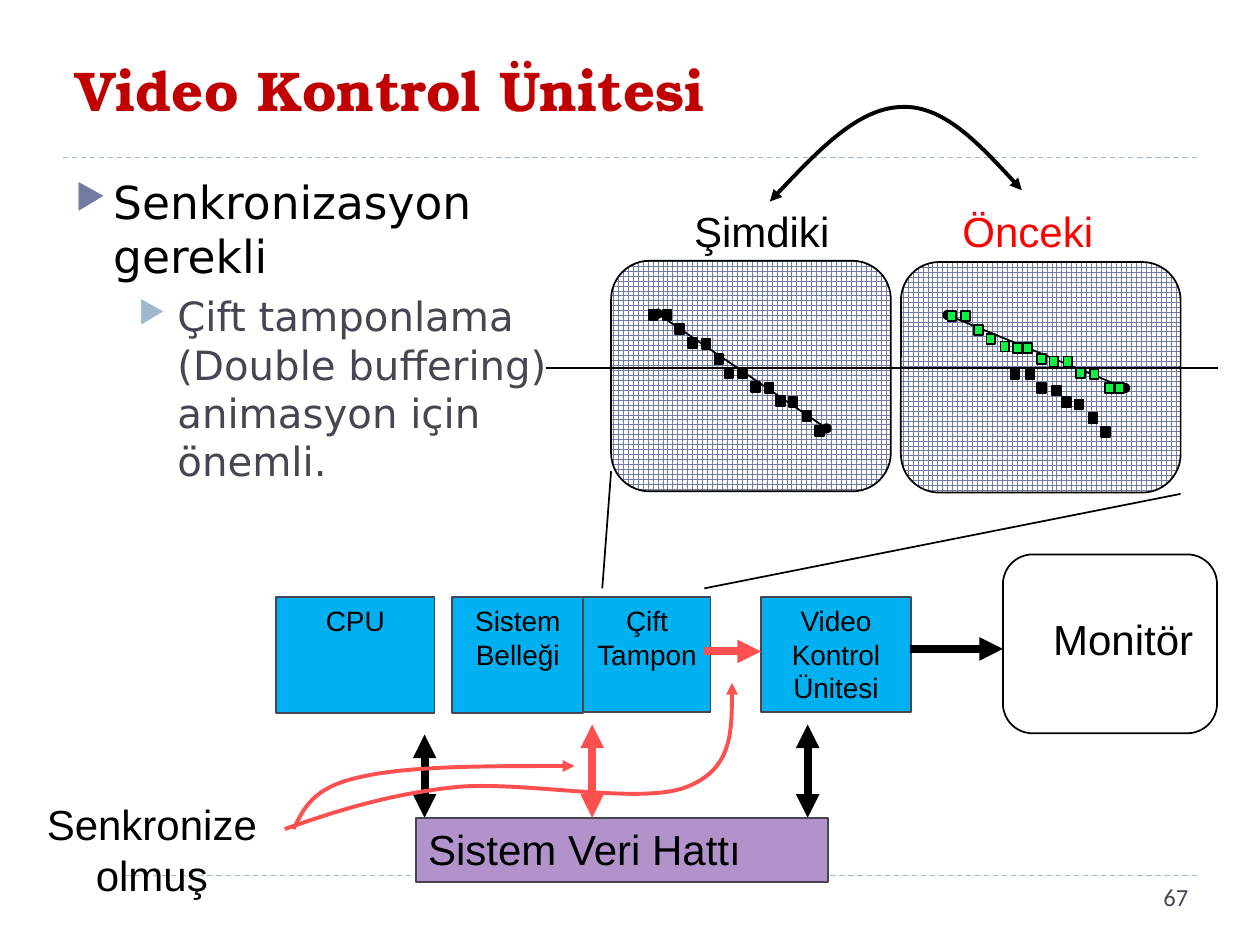
from dataclasses import dataclass

from lxml import etree
from pptx import Presentation
from pptx import util as u
from pptx.dml.color import RGBColor
from pptx.enum import dml, shapes, text
from pptx.oxml.ns import qn


@dataclass(frozen=True)
class Theme:
    black: str = "000000"
    white: str = "FFFFFF"
    red: str = "FF0000"
    coral: str = "FF5050"
    title: str = "C00000"
    slate: str = "464653"
    indigo: str = "727CA3"
    mist: str = "9FB8CD"
    sky: str = "00B0F0"
    lilac: str = "B292CA"
    green: str = "0EF044"
    sans: str = "Arial"
    thin: float = 1
    curve: float = 2.25
    thick: float = 4.5
    label: int = 24
    block: int = 16


THEME = Theme()
RECTANGLE = shapes.MSO_SHAPE.RECTANGLE
ROUNDED = shapes.MSO_SHAPE.ROUNDED_RECTANGLE
MARKER_SIZE = (0.07, 0.08)
SCREEN_SIZE = (2.22, 1.83)

CURRENT_LINE = [
    (5.26, 2.46), (5.15, 2.46), (5.36, 2.57), (5.46, 2.68), (5.57, 2.69),
    (5.67, 2.81), (5.75, 2.92), (5.86, 2.92), (5.96, 3.03), (6.07, 3.04),
    (6.16, 3.14), (6.26, 3.15), (6.37, 3.26), (6.47, 3.38)]
PREVIOUS_LINE = [
    (7.63, 2.47), (7.52, 2.47), (7.73, 2.58), (7.83, 2.65), (7.94, 2.71),
    (8.04, 2.72), (8.12, 2.72), (8.23, 2.81), (8.33, 2.83), (8.44, 2.83),
    (8.54, 2.92), (8.65, 2.93), (8.77, 3.04), (8.85, 3.04)]
LEFTOVER_LINE = [
    (8.02, 2.93), (8.14, 2.93), (8.23, 3.04), (8.35, 3.06),
    (8.43, 3.15), (8.53, 3.17), (8.64, 3.28), (8.74, 3.39)]


def rgb(color):
    return RGBColor.from_string(color)


def inches(values):
    return [u.Inches(value) for value in values]


def add_child(parent, tag, **attributes):
    return etree.SubElement(parent, qn(tag), attributes)


def set_values(target, values):
    for name, value in values.items():
        setattr(target, name, value)


def write(paragraph, content, size, color=THEME.black, font=THEME.sans,
          bold=False, align=text.PP_ALIGN.LEFT, space=0):
    paragraph.text = content
    set_values(paragraph, {"alignment": align, "space_before": u.Pt(space)})
    for run in paragraph.runs:
        set_values(run.font, {"size": u.Pt(size), "name": font, "bold": bold})
        run.font.color.rgb = rgb(color)


def add_text(slide, box, content, size, wrap=False,
             anchor=text.MSO_ANCHOR.TOP, **style):
    frame = slide.shapes.add_textbox(*inches(box)).text_frame
    set_values(frame, {"word_wrap": wrap, "vertical_anchor": anchor})
    write(frame.paragraphs[0], content, size, **style)
    return frame


def add_bullet(paragraph, left, hanging, color):
    properties = paragraph._p.get_or_add_pPr()
    properties.set("marL", str(u.Inches(left)))
    properties.set("indent", str(-u.Inches(hanging)))
    add_child(add_child(properties, "a:buClr"), "a:srgbClr", val=color)
    add_child(properties, "a:buSzPct", val="76000")
    add_child(properties, "a:buChar", char="▶")


def add_box(slide, box, fill, outline=THEME.black, kind=RECTANGLE):
    shape = slide.shapes.add_shape(kind, *inches(box))
    shape.shadow.inherit = False
    shape.fill.solid()
    shape.fill.fore_color.rgb = rgb(fill)
    if outline:
        shape.line.color.rgb = rgb(outline)
        shape.line.width = u.Pt(THEME.thin)
    else:
        shape.line.fill.background()
    return shape


def add_block(slide, box, lines, fill=THEME.sky, size=THEME.block,
              align=text.PP_ALIGN.CENTER):
    frame = add_box(slide, box, fill, THEME.slate).text_frame
    set_values(frame, {"word_wrap": True, "vertical_anchor": text.MSO_ANCHOR.TOP})
    for index, line in enumerate(lines):
        paragraph = frame.add_paragraph() if index else frame.paragraphs[0]
        write(paragraph, line, size, align=align)


def add_screen(slide, left, top):
    screen = add_box(slide, (left, top, *SCREEN_SIZE), THEME.white, kind=ROUNDED)
    screen.fill.patterned()
    screen.fill.pattern = dml.MSO_PATTERN.LARGE_GRID
    screen.fill.fore_color.rgb = rgb(THEME.indigo)
    screen.fill.back_color.rgb = rgb(THEME.white)


def add_markers(slide, points, fill):
    for point in points:
        add_box(slide, (*point, *MARKER_SIZE), fill)


def style_stroke(shape, color, width, head, tail):
    shape.line.color.rgb = rgb(color)
    shape.line.width = u.Pt(width)
    for tag, end in (("a:headEnd", head), ("a:tailEnd", tail)):
        if end:
            add_child(shape.line._get_or_add_ln(), tag, type=end)


def add_line(slide, start, end, color=THEME.black, width=THEME.thin,
             head=None, tail=None, dash=None):
    line = slide.shapes.add_connector(
        shapes.MSO_CONNECTOR.STRAIGHT, *inches(start + end))
    line.line.dash_style = dash
    style_stroke(line, color, width, head, tail)
    add_child(line._element.spPr, "a:effectLst")


def add_curve(slide, points, color, head=None):
    start, *controls = [inches(point) for point in points]
    builder = slide.shapes.build_freeform(*start)
    builder.add_line_segments(controls, close=False)
    curve = builder.convert_to_shape()
    segments = curve._element.xpath(".//a:lnTo")
    for index in range(0, len(segments), 3):
        bezier = etree.Element(qn("a:cubicBezTo"))
        segments[index].addprevious(bezier)
        for segment in segments[index:index + 3]:
            bezier.append(segment[0])
            segment.getparent().remove(segment)
    curve.shadow.inherit = False
    curve.fill.background()
    style_stroke(curve, color, THEME.curve, head, "triangle")


def add_frame(slide):
    for y in (6.95, 1.25):
        add_line(slide, (0.5, y), (9.5, y), THEME.mist, 0.75,
                 dash=dml.MSO_LINE.DASH)
    add_box(slide, (0.35, 6.82, 0.63, 0.63), THEME.white, None)
    add_text(slide, (0.5, 0.17, 9, 1.08), "Video Kontrol Ünitesi", 32, True,
             text.MSO_ANCHOR.MIDDLE, color=THEME.title,
             font="TeX Gyre Bonum", bold=True)
    body = add_text(slide, (0.5, 1.33, 9, 5.4), "Senkronizasyon\ngerekli", 26,
                    True, font="DejaVu Sans")
    add_bullet(body.paragraphs[0], 0.3, 0.3, THEME.indigo)
    detail = body.add_paragraph()
    detail.level = 1
    add_bullet(detail, 0.81, 0.31, THEME.mist)
    write(detail, "Çift tamponlama\n(Double buffering)\nanimasyon için\nönemli.",
          23, THEME.slate, "DejaVu Sans", space=5)
    add_text(slide, (7.2, 6.95, 2.33, 0.4), "67", 14, True, color=THEME.slate,
             font="Calibri", align=text.PP_ALIGN.RIGHT)


def add_hardware(slide):
    add_block(slide, (3.3, 6.49, 3.27, 0.51), ["Sistem Veri Hattı"],
              THEME.lilac, THEME.label, text.PP_ALIGN.LEFT)
    add_block(slide, (2.19, 4.74, 1.26, 0.92), ["CPU"])
    add_block(slide, (6.04, 4.74, 1.19, 0.91), ["Video Kontrol", "Ünitesi"])
    add_block(slide, (3.59, 4.74, 1.04, 0.92), ["Sistem Belleği"])
    for x, top, color in ((3.37, 5.83, THEME.black), (4.7, 5.75, THEME.coral),
                          (6.41, 5.75, THEME.black)):
        add_line(slide, (x, top), (x, 6.49), color, THEME.thick,
                 "triangle", "triangle")
    add_line(slide, (7.96, 5.15), (7.22, 5.15), width=THEME.thick, head="triangle")
    add_box(slide, (7.96, 4.4, 1.7, 1.42), THEME.white, kind=ROUNDED)
    add_text(slide, (8.26, 4.82, 1.33, 0.5), "Monitör", THEME.label)
    add_line(slide, (5.59, 4.67), (9.37, 3.92))
    add_line(slide, (4.78, 4.67), (4.85, 3.74))
    add_block(slide, (4.63, 4.74, 1.01, 0.91), ["Çift", "Tampon"])
    add_line(slide, (6.04, 5.17), (5.59, 5.17), THEME.coral, THEME.thick, "triangle")
    add_text(slide, (0.26, 6.29, 1.89, 0.91), "Senkronize\nolmuş", THEME.label,
             align=text.PP_ALIGN.CENTER)
    add_curve(slide, [(2.33, 6.58), (2.41, 6.42), (2.48, 6.25), (2.85, 6.17),
                      (3.22, 6.08), (3.89, 6.08), (4.56, 6.08)], THEME.coral)
    add_curve(slide, [(2.26, 6.58), (2.66, 6.44), (3.06, 6.31), (3.59, 6.25),
                      (4.12, 6.19), (5.07, 6.39), (5.44, 6.25),
                      (5.81, 6.11), (5.81, 5.76), (5.81, 5.42)], THEME.coral)


def add_buffers(slide):
    add_screen(slide, 4.85, 2.07)
    add_line(slide, (5.22, 2.49), (6.56, 3.4), head="oval", tail="oval")
    add_markers(slide, CURRENT_LINE, THEME.black)
    add_screen(slide, 7.15, 2.08)
    add_line(slide, (7.52, 2.5), (8.93, 3.08), head="oval", tail="oval")
    add_markers(slide, PREVIOUS_LINE, THEME.green)
    add_text(slide, (7.54, 1.58, 1.25, 0.5), "Önceki", THEME.label, color=THEME.red)
    add_text(slide, (5.41, 1.58, 1.29, 0.5), "Şimdiki", THEME.label)
    add_curve(slide, [(6.11, 1.6), (6.46, 1.23), (6.81, 0.86), (7.15, 0.85),
                      (7.48, 0.83), (7.8, 1.17), (8.11, 1.51)],
              THEME.black, "triangle")
    add_line(slide, (4.33, 2.92), (9.67, 2.92))
    add_markers(slide, LEFTOVER_LINE, THEME.black)


def main():
    presentation = Presentation()
    set_values(presentation, {"slide_width": u.Inches(10),
                              "slide_height": u.Inches(7.5)})
    slide = presentation.slides.add_slide(presentation.slide_layouts[6])
    add_frame(slide)
    add_hardware(slide)
    add_buffers(slide)
    presentation.save("out.pptx")


if __name__ == "__main__":
    main()
